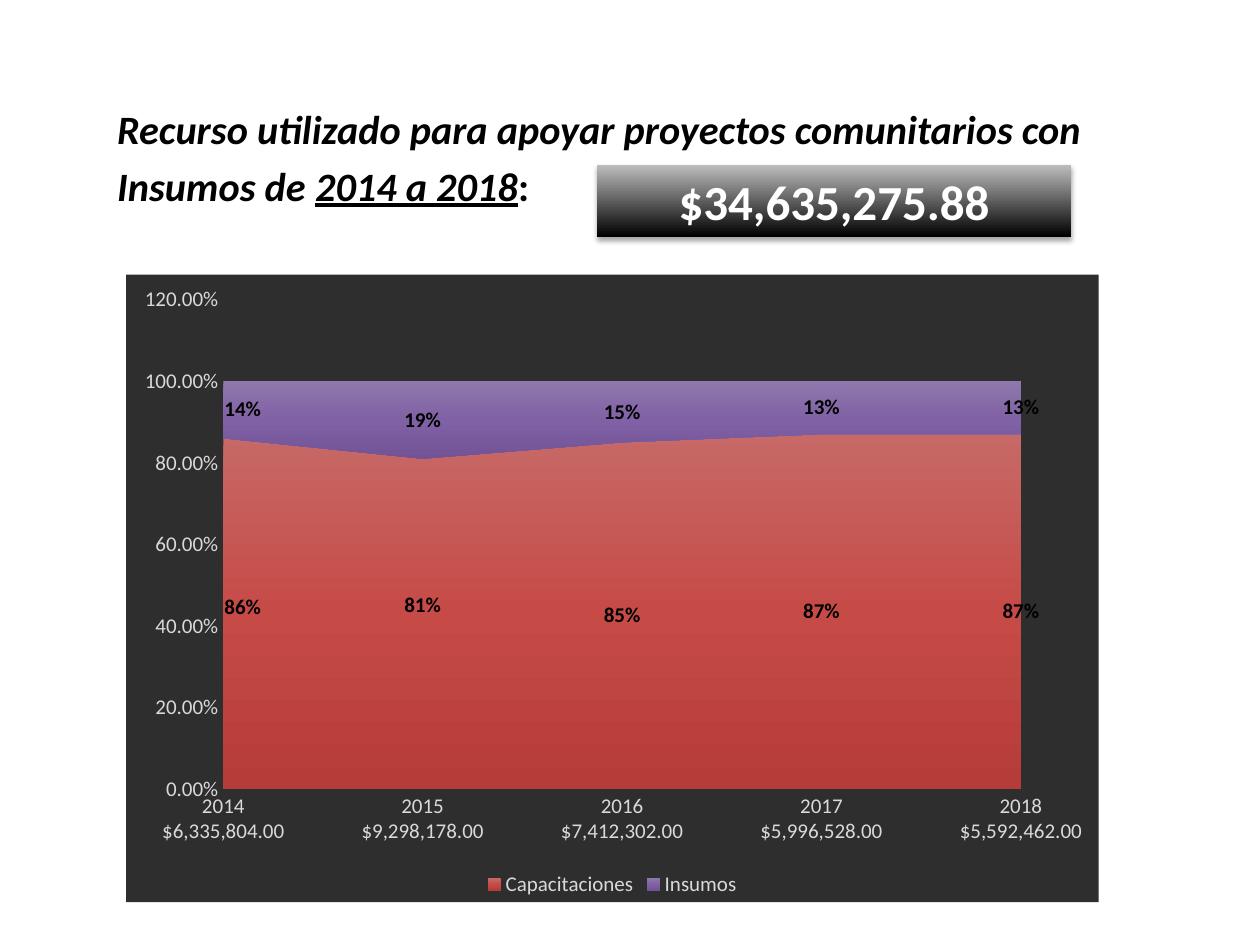
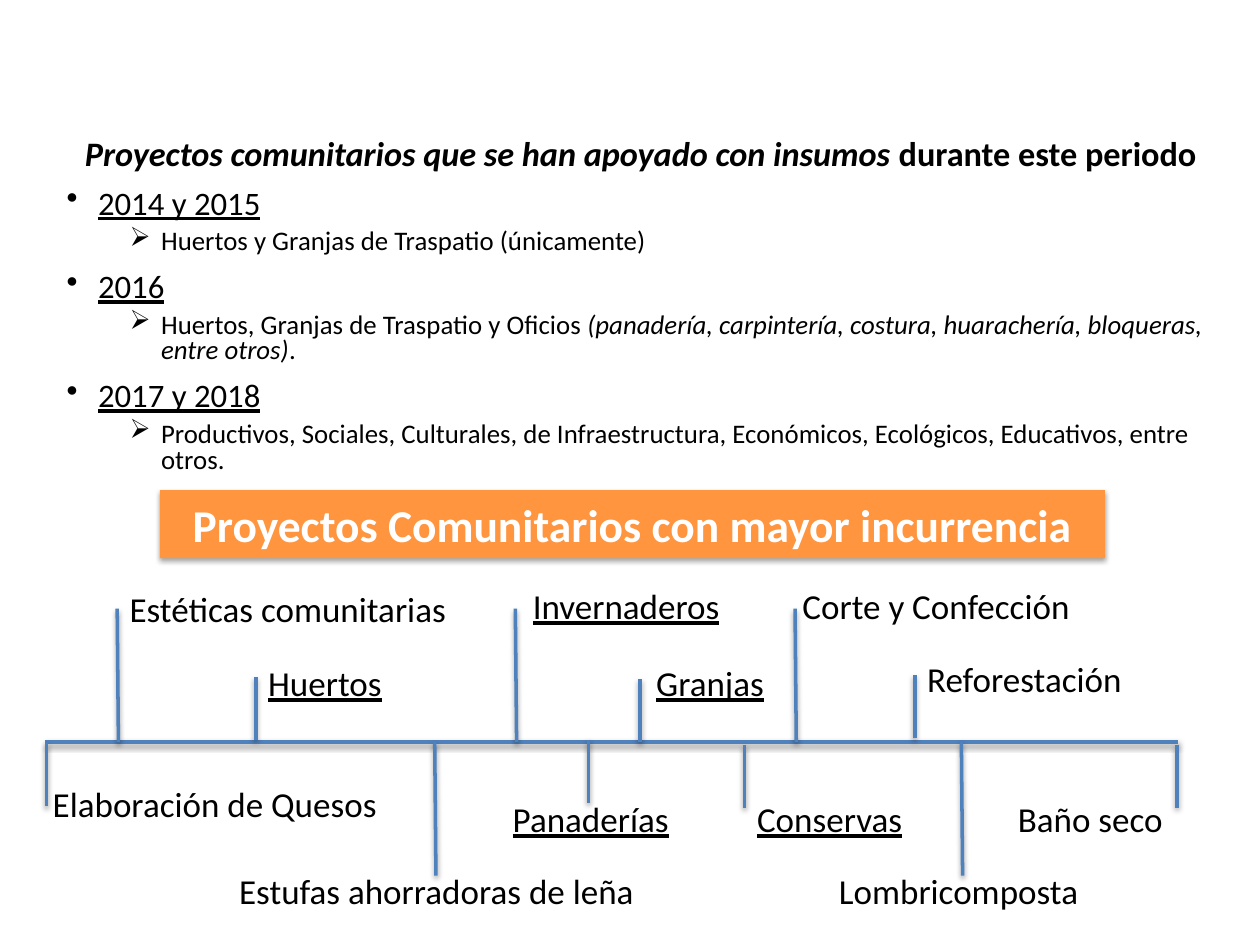
from dataclasses import dataclass
from typing import NamedTuple

from lxml import etree
from pptx import Presentation
from pptx.chart.data import CategoryChartData
from pptx.dml.color import RGBColor
from pptx.enum.chart import XL_CHART_TYPE, XL_LEGEND_POSITION, XL_TICK_MARK
from pptx.enum.shapes import MSO_CONNECTOR, MSO_SHAPE
from pptx.enum.text import MSO_ANCHOR, MSO_AUTO_SIZE, PP_ALIGN
from pptx.oxml import parse_xml
from pptx.oxml.ns import nsdecls, qn
from pptx.util import Emu, Inches, Pt

AREA_STACKED = XL_CHART_TYPE.AREA_STACKED
LEGEND_BOTTOM = XL_LEGEND_POSITION.BOTTOM
NO_TICK = XL_TICK_MARK.NONE
STRAIGHT = MSO_CONNECTOR.STRAIGHT
RECTANGLE = MSO_SHAPE.RECTANGLE
TOP, MIDDLE = MSO_ANCHOR.TOP, MSO_ANCHOR.MIDDLE
NO_FIT = MSO_AUTO_SIZE.NONE
LEFT, CENTER = PP_ALIGN.LEFT, PP_ALIGN.CENTER

FONT = "Calibri"
COLORS = {
    "ink": "000000",
    "paper": "FFFFFF",
    "silver": "BDBDBD",
    "orange": "FF953E",
    "branch": "4F81BD",
    "chart": "2E2E2E",
    "axis": "D9D9D9",
}
SLIDE_WIDTH, SLIDE_HEIGHT = Inches(10), Inches(7.5)
GRID_COLUMNS, GRID_ROWS = 100, 75
TITLE_LINE = Pt(32)
TRUNK_ROW = 58.9


class Box(NamedTuple):
    column: float
    row: float
    columns: float
    rows: float

    def lengths(self) -> tuple[Emu, Emu, Emu, Emu]:
        return across(self.column), down(self.row), across(self.columns), down(self.rows)


class Piece(NamedTuple):
    text: str
    bold: bool = False
    italic: bool = False
    underline: bool = False


class BulletLevel(NamedTuple):
    mark: str
    margin: float
    space: float
    size: float


class AreaSeries(NamedTuple):
    name: str
    values: tuple[float, ...]
    gradient: tuple[str, ...]
    label_shifts: dict[int, tuple[float, float]]


@dataclass
class Branch:
    text: str
    column: float
    start: float
    length: float
    label_column: float
    label_row: float
    label_columns: float
    underline: bool = False
    lean: float = 0


YEAR = BulletLevel("•", 0.25, 10, 18.7)
DETAIL = BulletLevel("➢", 0.75, 5, 15.3)
PROJECTS = [
    (YEAR, [Piece("2014 y 2015", underline=True)]),
    (DETAIL, [Piece("Huertos y Granjas de Traspatio (únicamente)")]),
    (YEAR, [Piece("2016", underline=True)]),
    (DETAIL, [
        Piece("Huertos, Granjas de Traspatio y Oficios "),
        Piece("(panadería, carpintería, costura, huarachería, bloqueras, entre otros)", italic=True),
        Piece("."),
    ]),
    (YEAR, [Piece("2017 y 2018", underline=True)]),
    (DETAIL, [Piece("Productivos, Sociales, Culturales, de Infraestructura, Económicos, "
                    "Ecológicos, Educativos, entre otros.")]),
]
SHORT, TALL = 5, 10.6
BRANCHES = [
    Branch("Estéticas comunitarias", 9.4, TRUNK_ROW, -TALL, 9.3, 46.1, 28.9, lean=-0.1),
    Branch("Huertos", 20.3, 58.7, -SHORT, 20.3, 52, 11.5, True),
    Branch("Invernaderos", 41, TRUNK_ROW, -TALL, 41.3, 45.9, 17.8, True, -0.1),
    Branch("Granjas", 50.8, TRUNK_ROW, -SHORT, 51.1, 52, 13.7, True),
    Branch("Corte y Confección", 63.2, TRUNK_ROW, -TALL, 62.7, 45.9, 24, lean=-0.1),
    Branch("Reforestación", 72.6, 58.6, -SHORT, 72.6, 51.7, 20.9),
    Branch("Elaboración de Quesos", 3.7, 59, SHORT, 3.2, 61.6, 28.9),
    Branch("Estufas ahorradoras de leña", 34.5, TRUNK_ROW, TALL, 18, 68.5, 34.3, lean=0.1),
    Branch("Panaderías", 46.7, 58.7, SHORT, 39.7, 62.8, 16.1, True),
    Branch("Conservas", 59.1, 59.1, SHORT, 59.1, 62.8, 18.1, True),
    Branch("Lombricomposta", 76.3, TRUNK_ROW, TALL, 65.6, 68.5, 21.9, lean=0.1),
    Branch("Baño seco", 93.4, 59.1, SHORT, 79.8, 62.8, 13.7),
]
SPENDING = {
    "2014": "$6,335,804.00",
    "2015": "$9,298,178.00",
    "2016": "$7,412,302.00",
    "2017": "$5,996,528.00",
    "2018": "$5,592,462.00",
}
SHARES = [
    AreaSeries("Capacitaciones", (0.86, 0.81, 0.85, 0.87, 0.87),
               ("C76967", "C64B47", "B63C39"), {0: (0.02, -0.01), 1: (0, -0.03)}),
    AreaSeries("Insumos", (0.14, 0.19, 0.15, 0.13, 0.13),
               ("8E78AC", "8061A5", "715396"), {0: (0.02, 0)}),
]


def across(columns: float) -> Emu:
    return Emu(round(SLIDE_WIDTH * columns / GRID_COLUMNS))


def down(rows: float) -> Emu:
    return Emu(round(SLIDE_HEIGHT * rows / GRID_ROWS))


def color(name: str) -> RGBColor:
    return RGBColor.from_string(COLORS[name])


def format_font(font, size: float, name: str = "ink", bold: bool = False) -> None:
    font.name, font.size, font.bold = FONT, Pt(size), bold
    font.color.rgb = color(name)


def add_pieces(paragraph, pieces: list[Piece], size: float) -> None:
    for piece in pieces:
        run = paragraph.add_run()
        run.text = piece.text
        format_font(run.font, size, bold=piece.bold)
        run.font.italic, run.font.underline = piece.italic, piece.underline


def paint_gradient(fill, properties, stops: tuple[str, ...], angle: int) -> None:
    fill.gradient()
    gradient = properties.find(qn("a:gradFill"))
    stop_list = gradient.find(qn("a:gsLst"))
    stop_list.clear()
    for index, value in enumerate(stops):
        position = round(100000 * index / (len(stops) - 1))
        stop = etree.SubElement(stop_list, qn("a:gs"), pos=str(position))
        etree.SubElement(stop, qn("a:srgbClr"), val=value)
    direction = gradient.find(qn("a:lin"))
    direction.set("ang", str(angle * 60000))
    direction.set("scaled", "0")


def cast_shadow(properties, opacity: int, distance: float) -> None:
    for effects in properties.findall(qn("a:effectLst")):
        properties.remove(effects)
    properties.append(parse_xml(
        f'<a:effectLst {nsdecls("a")}><a:outerShdw blurRad="{Pt(3.1)}" dist="{Pt(distance)}" '
        f'dir="5400000" rotWithShape="0"><a:srgbClr val="{COLORS["ink"]}">'
        f'<a:alpha val="{opacity * 1000}"/></a:srgbClr></a:outerShdw></a:effectLst>'))


def add_titled_slide(presentation, box: Box, pieces: list[Piece], size: float, alignment):
    slide = presentation.slides.add_slide(presentation.slide_layouts[5])
    title = slide.shapes.title
    title.left, title.top, title.width, title.height = box.lengths()
    frame = title.text_frame
    frame.auto_size, frame.vertical_anchor, frame.word_wrap = NO_FIT, TOP, True
    paragraph = frame.paragraphs[0]
    paragraph.alignment, paragraph.line_spacing = alignment, TITLE_LINE
    add_pieces(paragraph, pieces, size)
    return slide


def add_banner(slide, box: Box, text: str, size: float):
    banner = slide.shapes.add_shape(RECTANGLE, *box.lengths())
    banner.shadow.inherit = False
    banner.fill.solid()
    banner.fill.fore_color.rgb = color("orange")
    banner.line.fill.background()
    cast_shadow(banner._element.spPr, 35, 1.8)
    frame = banner.text_frame
    frame.text, frame.vertical_anchor, frame.word_wrap = text, MIDDLE, True
    frame.paragraphs[0].alignment = CENTER
    format_font(frame.paragraphs[0].runs[0].font, size, "paper", True)
    return banner


def add_text_box(slide, box: Box):
    frame = slide.shapes.add_textbox(*box.lengths()).text_frame
    frame.word_wrap = True
    return frame


def add_bullets(slide, box: Box, items: list[tuple[BulletLevel, list[Piece]]]) -> None:
    frame = add_text_box(slide, box)
    for index, (level, pieces) in enumerate(items):
        paragraph = frame.add_paragraph() if index else frame.paragraphs[0]
        paragraph.level = int(level is DETAIL)
        paragraph.line_spacing = 0.8
        paragraph.space_before = Pt(level.space if index else 0)
        properties = paragraph._p.get_or_add_pPr()
        properties.set("marL", str(Inches(level.margin)))
        properties.set("indent", str(Inches(-0.25)))
        etree.SubElement(properties, qn("a:buChar"), char=level.mark)
        add_pieces(paragraph, pieces, level.size)


def add_line(slide, column: float, row: float, end_column: float, end_row: float) -> None:
    line = slide.shapes.add_connector(
        STRAIGHT, across(column), down(row), across(end_column), down(end_row))
    line.line.color.rgb = color("branch")
    line.line.width = Pt(2)
    cast_shadow(line._element.spPr, 38, 1.6)


def add_branch(slide, branch: Branch) -> None:
    add_line(slide, branch.column, branch.start,
             branch.column + branch.lean, branch.start + branch.length)
    frame = add_text_box(
        slide, Box(branch.label_column, branch.label_row, branch.label_columns, 4.4))
    add_pieces(frame.paragraphs[0], [Piece(branch.text, underline=branch.underline)], 20)


def manual_layout(inner: str = "", **shares: float):
    entries = "".join(f'<c:{key} val="{value}"/>' for key, value in shares.items())
    return parse_xml(f'<c:layout {nsdecls("c")}><c:manualLayout>{inner}{entries}'
                     '</c:manualLayout></c:layout>')


def format_axis(axis, number_format: str) -> None:
    axis.has_major_gridlines = False
    axis.major_tick_mark = axis.minor_tick_mark = NO_TICK
    axis.format.line.fill.background()
    format_font(axis.tick_labels.font, 12, "axis")
    axis.tick_labels.number_format = number_format
    axis.tick_labels.number_format_is_linked = False


def format_series(series, share: AreaSeries) -> None:
    series.format.line.fill.background()
    paint_gradient(series.format.fill, series._element.find(qn("c:spPr")), share.gradient, 90)
    labels = series.data_labels
    labels.show_value = True
    labels.number_format, labels.number_format_is_linked = "0%", False
    format_font(labels.font, 12, bold=True)
    for index, (x, y) in share.label_shifts.items():
        format_font(series.points[index].data_label.font, 12, bold=True)
        label = series._element.xpath(f"c:dLbls/c:dLbl[c:idx/@val='{index}']")[0]
        label.insert(1, manual_layout(x=x, y=y))


def add_share_chart(slide, box: Box) -> None:
    data = CategoryChartData(number_format="0%")
    data.categories = [f"{year}\n{amount}" for year, amount in SPENDING.items()]
    for share in SHARES:
        data.add_series(share.name, share.values)
    chart = slide.shapes.add_chart(AREA_STACKED, *box.lengths(), data).chart
    format_font(chart.font, 10)
    chart.has_title = False
    chart.has_legend = True
    chart.legend.position, chart.legend.include_in_layout = LEGEND_BOTTOM, False
    format_font(chart.legend.font, 12, "axis")
    format_axis(chart.category_axis, "General")
    format_axis(chart.value_axis, "0.00%")
    chart.value_axis.minimum_scale, chart.value_axis.maximum_scale = 0, 1.2
    chart.value_axis.major_unit = 0.2
    for series, share in zip(chart.plots[0].series, SHARES):
        format_series(series, share)
    space = chart._chartSpace
    space.xpath(".//c:valAx/c:crossBetween")[0].set("val", "midCat")
    plot_area = space.xpath("c:chart/c:plotArea")[0]
    for layout in plot_area.findall(qn("c:layout")):
        plot_area.remove(layout)
    plot_area.insert(0, manual_layout(
        '<c:layoutTarget val="inner"/><c:xMode val="edge"/><c:yMode val="edge"/>',
        x=0.1, y=0.04, w=0.82, h=0.78))
    space.find(qn("c:chart")).addnext(parse_xml(
        f'<c:spPr {nsdecls("c", "a")}><a:solidFill><a:srgbClr val="{COLORS["chart"]}"/>'
        '</a:solidFill><a:ln><a:noFill/></a:ln></c:spPr>'))


def build_spending_slide(presentation) -> None:
    slide = add_titled_slide(presentation, Box(8.3, 7.2, 83.5, 10.4), [
        Piece("Recurso utilizado para apoyar proyectos comunitarios con Insumos de ", True, True),
        Piece("2014 a 2018", True, True, True),
        Piece(":", True),
    ], 23, LEFT)
    total = add_banner(slide, Box(47.4, 13.1, 37.6, 5.7), "$34,635,275.88", 28)
    paint_gradient(total.fill, total._element.spPr, (COLORS["ink"], COLORS["silver"]), 270)
    add_share_chart(slide, Box(10, 21.8, 77.2, 49.8))


def build_projects_slide(presentation) -> None:
    slide = add_titled_slide(presentation, Box(4.3, 8.8, 93.1, 5.5), [
        Piece("Proyectos comunitarios que se han apoyado con insumos ", True, True),
        Piece("durante este periodo", True),
    ], 19.6, CENTER)
    add_bullets(slide, Box(4.3, 14.6, 93.1, 24.3), PROJECTS)
    add_banner(slide, Box(12.7, 38.9, 75, 5.4), "Proyectos Comunitarios con mayor incurrencia", 26)
    add_line(slide, 3.6, TRUNK_ROW, 93.5, TRUNK_ROW)
    for branch in BRANCHES:
        add_branch(slide, branch)


def main() -> None:
    presentation = Presentation()
    presentation.slide_width, presentation.slide_height = SLIDE_WIDTH, SLIDE_HEIGHT
    build_spending_slide(presentation)
    build_projects_slide(presentation)
    presentation.save("out.pptx")


if __name__ == "__main__":
    main()
